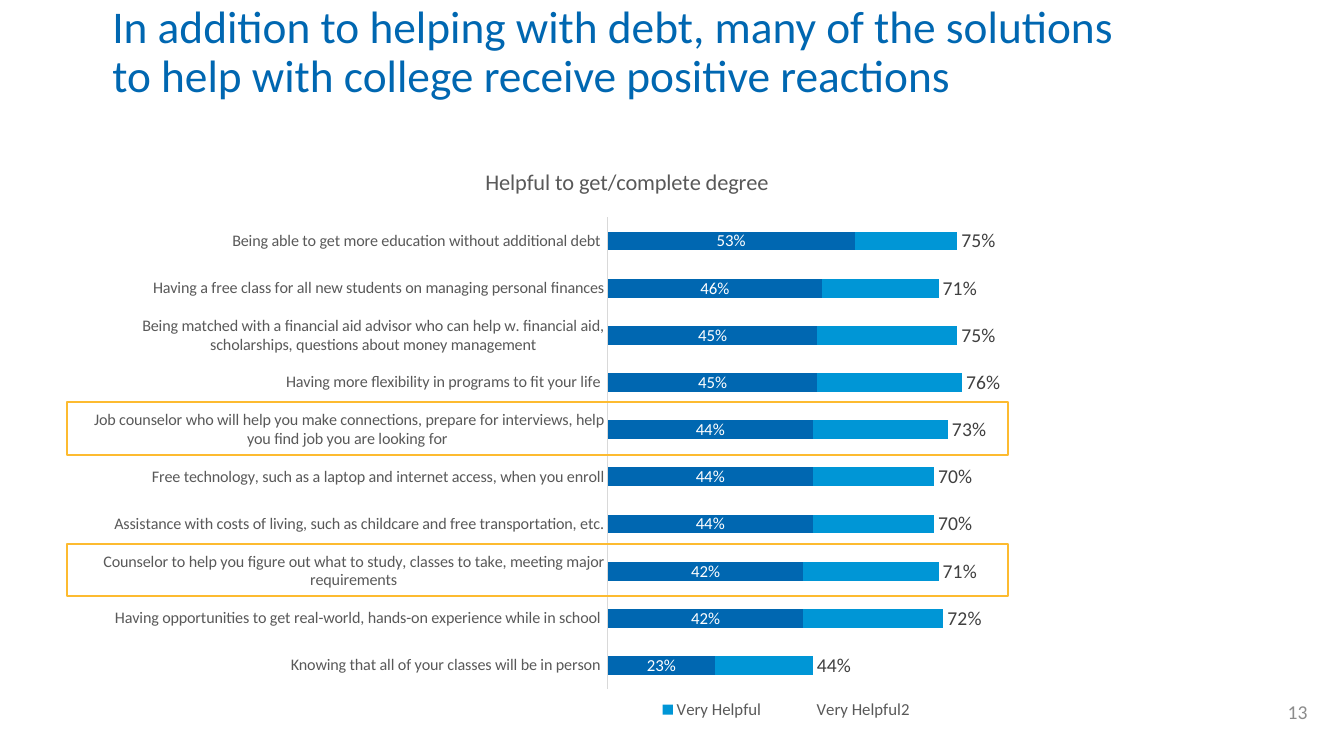
from lxml import etree
from pptx import Presentation
from pptx import util as u
from pptx.chart.data import CategoryChartData
from pptx.dml.color import RGBColor
from pptx.enum import chart as charts, shapes, text
from pptx.oxml.ns import qn

FONT = "Calibri"
PLOT = (0.415, 0.114, 0.585, 0.811)
REACTIONS = [
    ("Being able to get more education without additional debt ", 0.53, 0.22, 0.75),
    ("Having a free class for all new students on managing personal finances", 0.46, 0.25, 0.71),
    ("Being matched with a financial aid advisor who can help w. financial aid, "
     "scholarships, questions about money management", 0.45, 0.3, 0.75),
    ("Having more flexibility in programs to fit your life ", 0.45, 0.31, 0.76),
    ("Job counselor who will help you make connections, prepare for interviews, "
     "help you find job you are looking for ", 0.44, 0.29, 0.73),
    ("Free technology, such as a laptop and internet access, when you enroll", 0.44, 0.26, 0.7),
    ("Assistance with costs of living, such as childcare and free transportation, etc.",
     0.44, 0.26, 0.7),
    ("Counselor to help you figure out what to study, classes to take, "
     "meeting major requirements", 0.42, 0.29, 0.71),
    ("Having opportunities to get real-world, hands-on experience while in school ",
     0.42, 0.3, 0.72),
    ("Knowing that all of your classes will be in person ", 0.23, 0.21, 0.44),
]
COUNSELOR_ROWS = (4, 7)


def color(hex_value):
    """Turn a hex string into a colour."""
    return RGBColor.from_string(hex_value)


def style(font, size, hex_value):
    """Set typeface, size and colour of a font."""
    font.name, font.size, font.bold = FONT, u.Pt(size), False
    font.color.rgb = color(hex_value)


def place(shape, box):
    """Move a shape to a box given in points."""
    shape.left, shape.top, shape.width, shape.height = map(u.Pt, box)


def set_layout(element, index, **values):
    """Give a chart part a manual layout as fractions of the chart."""
    for old in element.findall(qn("c:layout")):
        element.remove(old)
    layout = etree.Element(qn("c:layout"))
    manual = etree.SubElement(layout, qn("c:manualLayout"))
    for tag, value in values.items():
        etree.SubElement(manual, qn(f"c:{tag}")).set("val", str(value))
    element.insert(index, layout)


def add_title(slide, box):
    """Write the headline in the title placeholder."""
    title = slide.shapes.title
    place(title, box)
    frame = title.text_frame
    frame.text = ("In addition to helping with debt, many of the solutions "
                  "to help with college receive positive reactions")
    frame.word_wrap = True
    frame.auto_size = text.MSO_AUTO_SIZE.NONE
    frame.vertical_anchor = text.MSO_ANCHOR.MIDDLE
    headline = frame.paragraphs[0]
    headline.alignment = text.PP_ALIGN.LEFT
    headline.line_spacing = 0.9
    style(headline.runs[0].font, 32.4, "0067B1")


def add_page_number(slide, box):
    """Write the page number at the right of its box."""
    frame = slide.shapes.add_textbox(*map(u.Pt, box)).text_frame
    frame.text = "13"
    frame.word_wrap = True
    frame.vertical_anchor = text.MSO_ANCHOR.MIDDLE
    number = frame.paragraphs[0]
    number.alignment = text.PP_ALIGN.RIGHT
    style(number.runs[0].font, 14, "8C8C8C")


def label_series(series, position, size, hex_value):
    """Show the values of a series as percentages."""
    labels = series.data_labels
    labels.show_value = True
    labels.number_format, labels.number_format_is_linked = "0%", False
    labels.position = position
    style(labels.font, size, hex_value)


def add_legend(chart):
    """Place the legend under the bars without the first series."""
    chart.has_legend = True
    legend = chart.legend
    legend.position = charts.XL_LEGEND_POSITION.RIGHT
    legend.include_in_layout = False
    style(legend.font, 12, "595959")
    element = chart.element.find(".//" + qn("c:legend"))
    entry = etree.Element(qn("c:legendEntry"))
    etree.SubElement(entry, qn("c:idx")).set("val", "2")
    etree.SubElement(entry, qn("c:delete")).set("val", "1")
    element.insert(1, entry)
    set_layout(element, 2, xMode="edge", yMode="edge", x=0.43, y=0.93, w=0.25, h=0.06)


def add_reactions(slide, box):
    """Draw the stacked bars of helpful solutions."""
    labels, extremely, very, total = zip(*REACTIONS)
    data = CategoryChartData(number_format="0%")
    data.categories = labels
    data.add_series("Extremely Helpful", extremely)
    data.add_series("Very Helpful", very)
    data.add_series("Very Helpful2", total)
    chart = slide.shapes.add_chart(
        charts.XL_CHART_TYPE.BAR_STACKED, *map(u.Pt, box), data).chart
    style(chart.font, 10, "000000")

    chart.has_title = True
    chart.chart_title.text_frame.text = "Helpful to get/complete degree"
    style(chart.chart_title.text_frame.paragraphs[0].runs[0].font, 16, "595959")
    set_layout(chart.chart_title.element if hasattr(chart.chart_title, "element")
               else chart.element.find(".//" + qn("c:title")), 1,
               xMode="edge", yMode="edge", x=0.316, y=0.02)

    solutions, share = chart.category_axis, chart.value_axis
    solutions.reverse_order = True
    solutions.major_tick_mark = charts.XL_TICK_MARK.NONE
    solutions.format.line.color.rgb = color("D9D9D9")
    solutions.format.line.width = u.Pt(0.75)
    style(solutions.tick_labels.font, 11.5, "595959")
    share.minimum_scale, share.maximum_scale = 0, 1.6
    share.has_major_gridlines = False
    share.visible = False

    plot = chart.plots[0]
    plot.gap_width, plot.overlap, plot.vary_by_categories = 150, 100, False
    for series, fill in zip(plot.series, ("0067B1", "0096D6", None)):
        if fill:
            series.format.fill.solid()
            series.format.fill.fore_color.rgb = color(fill)
        else:
            series.format.fill.background()
    label_series(plot.series[0], charts.XL_LABEL_POSITION.CENTER, 12, "FFFFFF")
    label_series(plot.series[2], charts.XL_LABEL_POSITION.INSIDE_BASE, 14, "404040")

    add_legend(chart)
    x, y, w, h = PLOT
    set_layout(chart.element.find(".//" + qn("c:plotArea")), 0, layoutTarget="inner",
               xMode="edge", yMode="edge", x=x, y=y, w=w, h=h)


def add_highlights(slide, box):
    """Frame the counselor rows of the chart in the given box."""
    left, top, _, height = box
    row_height = height * PLOT[3] / len(REACTIONS)
    frame_height = 37.5
    for row in COUNSELOR_ROWS:
        middle = top + height * PLOT[1] + (row + 0.5) * row_height - 1
        highlight = slide.shapes.add_shape(
            shapes.MSO_SHAPE.RECTANGLE,
            *map(u.Pt, (left - 8, middle - frame_height / 2, 672, frame_height)))
        highlight.shadow.inherit = False
        highlight.fill.background()
        highlight.line.color.rgb = color("FDBB30")
        highlight.line.width = u.Pt(1.5)


def main():
    """Build and save the slide."""
    deck = Presentation()
    deck.slide_width, deck.slide_height = u.Pt(960), u.Pt(540)
    slide = deck.slides.add_slide(deck.slide_layouts[5])
    chart_box = (56, 108, 911, 415.5)
    add_title(slide, (73, 0, 732, 76))
    add_page_number(slide, (870.5, 494, 70.5, 29))
    add_reactions(slide, chart_box)
    add_highlights(slide, chart_box)
    deck.save("out.pptx")


if __name__ == "__main__":
    main()
